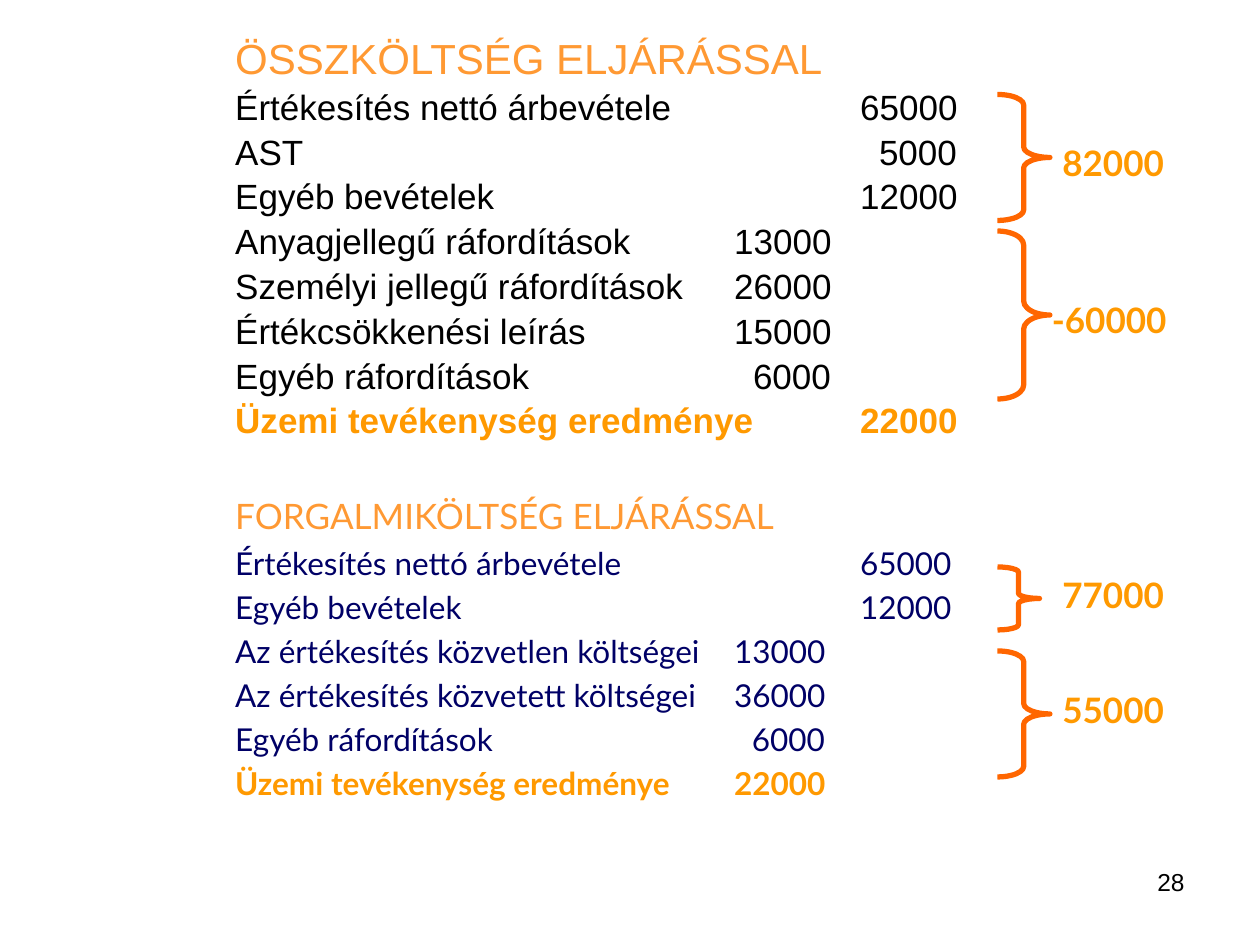
from pptx import Presentation
from pptx.dml.color import RGBColor
from pptx.enum.shapes import MSO_SHAPE
from pptx.enum.text import PP_ALIGN
from pptx.util import Inches, Pt

HEADING = RGBColor(0xFF, 0x99, 0x33)
RESULT = RGBColor(0xFF, 0x99, 0x00)
BRACE = RGBColor(0xFF, 0x66, 0x00)
BLACK = RGBColor(0x00, 0x00, 0x00)
NAVY = RGBColor(0x00, 0x00, 0x66)

COLUMNS, ROWS = 120, 90
SLIDE_WIDTH, SLIDE_HEIGHT = Inches(10), Inches(7.5)
AMOUNT_STARTS = (4, 5)
AMOUNT_DIGITS = 5

TOTAL_COST = {
    "heading": "ÖSSZKÖLTSÉG ELJÁRÁSSAL",
    "rows": [
        ("Értékesítés nettó árbevétele", "65000", 1),
        ("AST", "5000", 1),
        ("Egyéb bevételek", "12000", 1),
        ("Anyagjellegű ráfordítások", "13000", 0),
        ("Személyi jellegű ráfordítások", "26000", 0),
        ("Értékcsökkenési leírás", "15000", 0),
        ("Egyéb ráfordítások", "6000", 0),
        ("Üzemi tevékenység eredménye", "22000", 1),
    ],
    "heading_font": {"name": "Arial", "size": Pt(24)},
    "row_font": {"name": "Arial", "size": Pt(20)},
    "row_color": BLACK,
    "row_format": {"line_spacing": 0.9, "space_before": Pt(4)},
    "digit_width": 0.15,
}

TURNOVER_COST = {
    "heading": "FORGALMIKÖLTSÉG ELJÁRÁSSAL",
    "rows": [
        ("Értékesítés nettó árbevétele", "65000", 1),
        ("Egyéb bevételek", "12000", 1),
        ("Az értékesítés közvetlen költségei", "13000", 0),
        ("Az értékesítés közvetett költségei", "36000", 0),
        ("Egyéb ráfordítások", "6000", 0),
        ("Üzemi tevékenység eredménye", "22000", 0),
    ],
    "heading_font": {"name": "Lato", "size": Pt(20)},
    "row_font": {"name": "Lato", "size": Pt(18)},
    "row_color": NAVY,
    "row_format": {"space_before": Pt(3.6)},
    "digit_width": 0.14,
}

SUBTOTALS = [
    ("82000", (95, 9, 5, 12), 0.2, (100, 12.84, 17, 5.2)),
    ("-60000", (95, 22, 5, 16), 0.267, (99, 27.84, 17, 5.2)),
    ("77000", (95, 54, 4, 6), 0.125, (100, 54, 17, 5.2)),
    ("55000", (95, 62, 5, 12), 0.2, (100, 65, 17, 5.2)),
]


def on_grid(box):
    left, top, width, height = box
    column, row = SLIDE_WIDTH / COLUMNS, SLIDE_HEIGHT / ROWS
    return (round(left * column), round(top * row),
            round(width * column), round(height * row))


def apply_format(target, values):
    for name, value in values.items():
        setattr(target, name, value)


def write(paragraph, wording, font, color):
    paragraph.text = wording
    apply_format(paragraph.font, font)
    paragraph.font.color.rgb = color


def add_frame(slide, box):
    frame = slide.shapes.add_textbox(*on_grid(box)).text_frame
    frame.word_wrap = True
    return frame


def set_indents(paragraph, **lengths):
    properties = paragraph._p.get_or_add_pPr()
    for name, length in lengths.items():
        properties.set(name, str(Inches(length)))


def add_statement(slide, box, statement):
    frame = add_frame(slide, box)
    frame.margin_left = Inches(0.16)
    heading = frame.paragraphs[0]
    set_indents(heading, indent=0.04)
    write(heading, statement["heading"], statement["heading_font"], HEADING)
    heading.line_spacing = 0.9
    last = len(statement["rows"]) - 1
    for number, (item, amount, column) in enumerate(statement["rows"]):
        line = frame.add_paragraph()
        missing_digits = AMOUNT_DIGITS - len(amount)
        amount_start = (AMOUNT_STARTS[column]
                        + missing_digits * statement["digit_width"])
        set_indents(line, indent=0.04, defTabSz=amount_start)
        is_result = number == last
        write(line, f"{item}\t{amount}",
              {**statement["row_font"], "bold": is_result},
              RESULT if is_result else statement["row_color"])
        apply_format(line, statement["row_format"])


def add_subtotal(slide, amount, brace_box, curl, amount_box):
    brace = slide.shapes.add_shape(MSO_SHAPE.RIGHT_BRACE, *on_grid(brace_box))
    brace.shadow.inherit = False
    brace.fill.background()
    brace.line.color.rgb = BRACE
    brace.line.width = Pt(3)
    brace.adjustments[0] = curl
    brace.adjustments[1] = 0.5
    frame = add_frame(slide, amount_box)
    write(frame.paragraphs[0], amount,
          {"name": "Lato", "size": Pt(20), "bold": True}, RESULT)


def add_page_number(slide, box):
    number = add_frame(slide, box).paragraphs[0]
    write(number, "28", {"name": "Arial", "size": Pt(14)}, BLACK)
    number.alignment = PP_ALIGN.RIGHT


def main():
    presentation = Presentation()
    apply_format(presentation, {"slide_width": SLIDE_WIDTH,
                                "slide_height": SLIDE_HEIGHT})
    slide = presentation.slides.add_slide(presentation.slide_layouts[6])
    add_page_number(slide, (86, 82, 28, 6.2))
    add_statement(slide, (20, 3, 80, 39), TOTAL_COST)
    add_statement(slide, (20, 47, 80, 29), TURNOVER_COST)
    for subtotal in SUBTOTALS:
        add_subtotal(slide, *subtotal)
    presentation.save("out.pptx")


if __name__ == "__main__":
    main()
